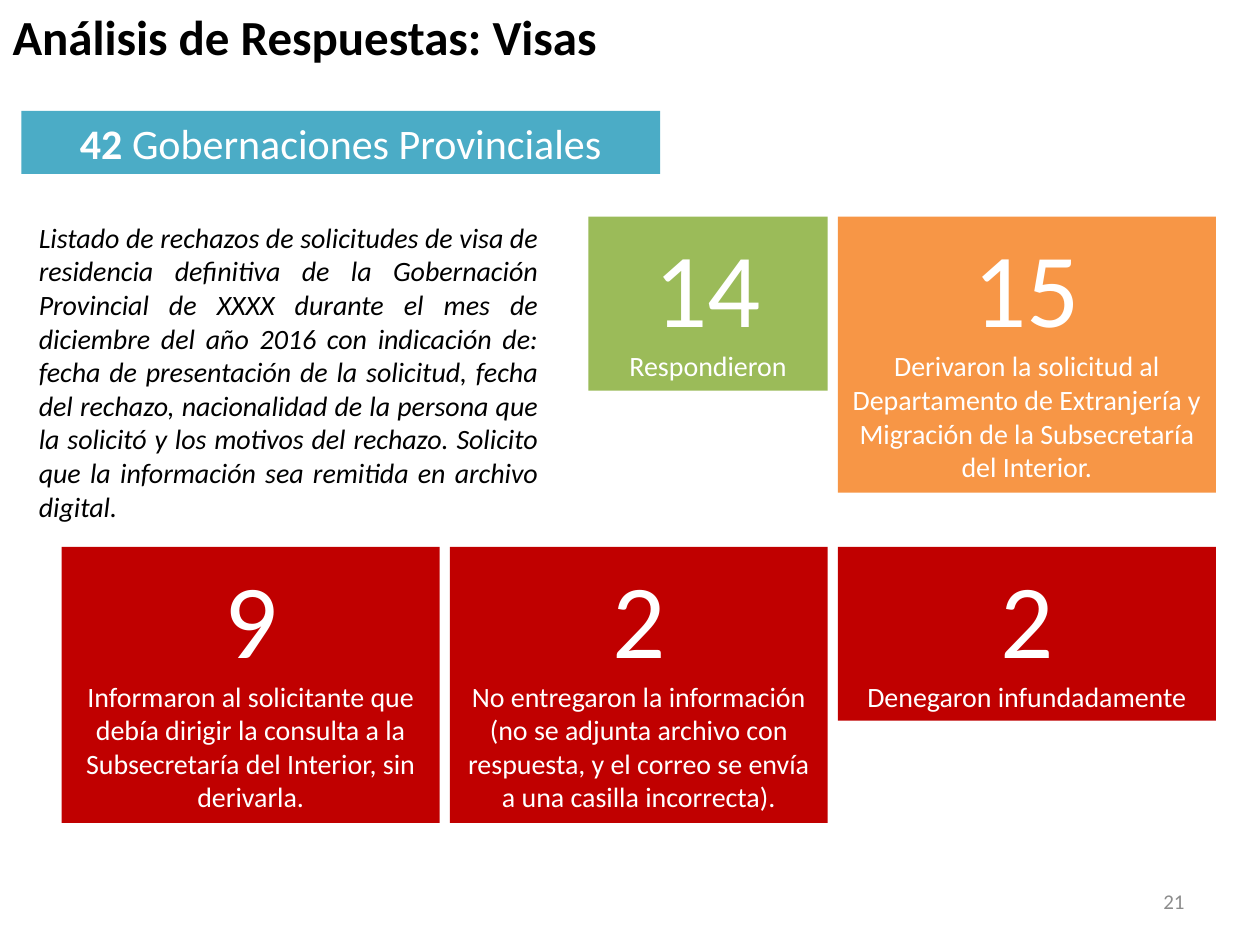
from dataclasses import dataclass
from pptx import Presentation
from pptx.util import Inches, Pt
from pptx.dml.color import RGBColor
from pptx.enum import shapes, text


@dataclass(frozen=True)
class Theme:
    font: str = "Calibri"
    ink: str = "000000"
    paper: str = "FFFFFF"
    gray: str = "8C8C8C"
    blue: str = "4BACC6"
    green: str = "9BBB59"
    orange: str = "F79646"
    red: str = "C00000"
    title: int = 28
    band: int = 24
    count: int = 60
    body: int = 16
    small: int = 12


THEME = Theme()
ALIGN = text.PP_ALIGN
ANCHOR = text.MSO_ANCHOR


def write(para, words, size=THEME.body, color=THEME.ink, bold=False,
          italic=False, align=ALIGN.LEFT):
    para.alignment = align
    run = para.add_run()
    run.text = words
    font = run.font
    font.name, font.size = THEME.font, Pt(size)
    font.bold, font.italic = bold, italic
    font.color.rgb = RGBColor.from_string(color)


def frame(shape, anchor=ANCHOR.TOP):
    body = shape.text_frame
    body.word_wrap = True
    body.auto_size = text.MSO_AUTO_SIZE.NONE
    body.vertical_anchor = anchor
    return body


def place(box):
    return [Inches(side) for side in box]


def block(slide, box, fill):
    shape = slide.shapes.add_shape(shapes.MSO_SHAPE.RECTANGLE, *place(box))
    shape.shadow.inherit = False
    shape.fill.solid()
    shape.fill.fore_color.rgb = RGBColor.from_string(fill)
    shape.line.fill.background()
    return frame(shape)


def head(slide, box):
    title = slide.shapes.title
    title.left, title.top, title.width, title.height = place(box)
    write(frame(title).paragraphs[0], "Análisis de Respuestas: Visas",
          size=THEME.title, bold=True)


def band(slide, box):
    para = block(slide, box, THEME.blue).paragraphs[0]
    look = dict(size=THEME.band, color=THEME.paper, align=ALIGN.CENTER)
    write(para, "42", bold=True, **look)
    write(para, " Gobernaciones Provinciales", **look)


def card(slide, box, fill, count, label):
    body = block(slide, box, fill)
    look = dict(color=THEME.paper, align=ALIGN.CENTER)
    write(body.paragraphs[0], count, size=THEME.count, **look)
    write(body.add_paragraph(), label, **look)


def note(slide, box, words, anchor=ANCHOR.TOP, **look):
    body = frame(slide.shapes.add_textbox(*place(box)), anchor)
    write(body.paragraphs[0], words, **look)


def cards(slide, box):
    left, top, width, height = box
    wide, slim, tall, short = 3, 1.9, 2.19, 1.38
    step = (width - wide) / 2
    cols = [left + i * step for i in range(3)]
    low = top + height - tall
    items = [
        (cols[1] + wide - slim, top, slim, short, THEME.green, "14",
         "Respondieron"),
        (cols[2], top, wide, tall, THEME.orange, "15",
         "Derivaron la solicitud al Departamento de Extranjería y "
         "Migración de la Subsecretaría del Interior."),
        (cols[0], low, wide, tall, THEME.red, "9",
         "Informaron al solicitante que debía dirigir la consulta a la "
         "Subsecretaría del Interior, sin derivarla."),
        (cols[1], low, wide, tall, THEME.red, "2",
         "No entregaron la información (no se adjunta archivo con "
         "respuesta, y el correo se envía a una casilla incorrecta)."),
        (cols[2], low, wide, short, THEME.red, "2",
         "Denegaron infundadamente"),
    ]
    for *spot, fill, count, label in items:
        card(slide, spot, fill, count, label)


def main():
    deck = Presentation()
    deck.slide_width, deck.slide_height = Inches(10), Inches(7.5)
    slide = deck.slides.add_slide(deck.slide_layouts.get_by_name("Title Only"))
    head(slide, (0, 0, 9.88, 0.57))
    band(slide, (0.17, 0.88, 5.07, 0.5))
    cards(slide, (0.49, 1.72, 9.16, 4.81))
    note(slide, (0.21, 1.7, 4.16, 2.52),
         "Listado de rechazos de solicitudes de visa de residencia definitiva "
         "de la Gobernación Provincial de XXXX durante el mes de diciembre del "
         "año 2016 con indicación de: fecha de presentación de la solicitud, "
         "fecha del rechazo, nacionalidad de la persona que la solicitó y los "
         "motivos del rechazo. Solicito que la información sea remitida en "
         "archivo digital.", italic=True, align=ALIGN.JUSTIFY)
    note(slide, (7.17, 6.95, 2.33, 0.4), "21", anchor=ANCHOR.MIDDLE,
         size=THEME.small, color=THEME.gray, align=ALIGN.RIGHT)
    deck.save("out.pptx")


if __name__ == "__main__":
    main()
